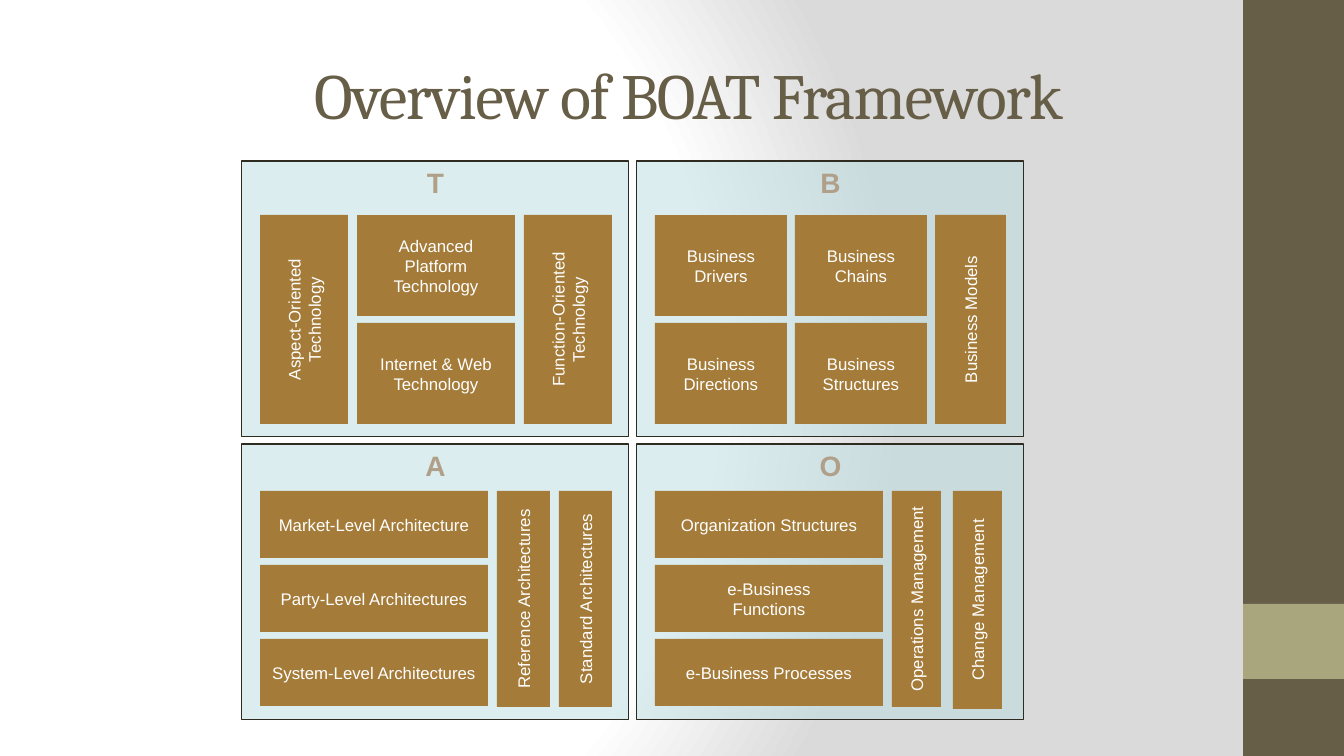
from dataclasses import dataclass

from lxml import etree
from pptx import Presentation
from pptx.dml.color import RGBColor
from pptx.enum.shapes import MSO_SHAPE
from pptx.enum.text import MSO_ANCHOR, MSO_AUTO_SIZE, PP_ALIGN
from pptx.oxml import parse_xml
from pptx.oxml.ns import qn
from pptx.util import Emu, Pt

RECT = MSO_SHAPE.RECTANGLE
CENTER = PP_ALIGN.CENTER
TOP, MIDDLE = MSO_ANCHOR.TOP, MSO_ANCHOR.MIDDLE
NO_AUTOFIT = MSO_AUTO_SIZE.NONE

PX = 914400 / 100.8  # EMU per pixel
SLIDE_W, SLIDE_H = 1344, 756
TITLE_ONLY = 5


@dataclass(frozen=True)
class Theme:
    heading_font: str = "Cambria"
    body_font: str = "Arial"
    olive: str = "675E47"
    sage: str = "A9A57C"
    panel: str = "BADDE1"
    panel_alpha: int = 50
    border: str = "2F2B20"
    letter: str = "B1A089"
    block: str = "A47B38"
    white: str = "FFFFFF"
    grey: str = "DADADA"
    title_size: int = 46
    letter_size: int = 20
    block_size: int = 12


THEME = Theme()

# Panel geometry
PANEL_X, PANEL_Y, PANEL_W, PANEL_H = 242, 161, 387, 276
PITCH_X, PITCH_Y = 395, 283
INSET = 18
GRID_Y, CELL_H, CELL_PITCH = 54, 101, 108      # upper panels
GRID_H = CELL_PITCH + CELL_H
ROWS_Y, ROW_W, ROW_H, ROW_PITCH = 47, 228, 67, 74  # lower panels
ROWS_H = 2 * ROW_PITCH + ROW_H + 1


def px(*values):
    return [Emu(round(v * PX)) for v in values]


def grid(lefts, width, labels):
    """Cells in two rows, filled row by row."""
    n = len(lefts)
    return [(lefts[i % n], GRID_Y + i // n * CELL_PITCH, width, CELL_H, label, False)
            for i, label in enumerate(labels)]


def rows(labels):
    return [(INSET, ROWS_Y + i * ROW_PITCH, ROW_W, ROW_H, label, False)
            for i, label in enumerate(labels)]


# Blocks per panel: left, top, width, height (inside the panel), label, upright
PANELS = [
    ("T", 0, 0, grid([115], 158, ["Advanced Platform Technology",
                                  "Internet & Web Technology"]) + [
        (INSET, GRID_Y, 88, GRID_H, "Aspect-Oriented Technology", True),
        (282, GRID_Y, 88, GRID_H, "Function-Oriented Technology", True)]),
    ("B", 1, 0, grid([INSET, 158], 132, ["Business\nDrivers", "Business\nChains",
                                         "Business\nDirections", "Business\nStructures"]) + [
        (298, GRID_Y, 71, GRID_H, "Business Models", True)]),
    ("A", 0, 1, rows(["Market-Level Architecture", "Party-Level Architectures",
                      "System-Level Architectures"]) + [
        (255, ROWS_Y, 53, ROWS_H, "Reference Architectures", True),
        (317, ROWS_Y, 53, ROWS_H, "Standard Architectures", True)]),
    ("O", 1, 1, rows(["Organization Structures", "e-Business\vFunctions",
                      "e-Business Processes"]) + [
        (255, ROWS_Y, 49, ROWS_H, "Operations Management", True),
        (316, ROWS_Y, 49, ROWS_H + 2, "Change Management", True)]),
]


def write(tf, text, font, size, color, anchor, bold=False):
    tf.text = text
    tf.word_wrap = True
    tf.vertical_anchor = anchor
    for p in tf.paragraphs:
        p.alignment = CENTER
        for r in p.runs:
            r.font.name = font
            r.font.size = Pt(size)
            r.font.bold = bold
            r.font.color.rgb = RGBColor.from_string(color)


def add_rect(shapes, box, color):
    sp = shapes.add_shape(RECT, *px(*box))
    sp.shadow.inherit = False
    sp.fill.solid()
    sp.fill.fore_color.rgb = RGBColor.from_string(color)
    sp.line.fill.background()
    return sp


def add_background(slide):
    """Radial gradient behind the whole slide."""
    stops = "".join(f'<a:gs pos="{pos * 1000}"><a:srgbClr val="{color}"/></a:gs>'
                    for pos, color in [(0, THEME.white), (75, THEME.white), (100, THEME.grey)])
    fill = parse_xml(
        '<a:gradFill xmlns:a="http://schemas.openxmlformats.org/drawingml/2006/main" '
        f'rotWithShape="1"><a:gsLst>{stops}</a:gsLst><a:path path="circle">'
        '<a:fillToRect l="20000" t="50000" r="100000" b="50000"/></a:path></a:gradFill>')
    slide.background.fill.solid()
    solid = slide.element.find(".//" + qn("p:bgPr")).find(qn("a:solidFill"))
    solid.getparent().replace(solid, fill)


def add_sidebar(slide, x, y, w, h):
    add_rect(slide.shapes, (x, y, w, h), THEME.olive)
    add_rect(slide.shapes, (x, y + h * 4 // 5, w, h // 10), THEME.sage)


def add_title(slide, x, y, w, h):
    title = slide.shapes.title
    title.left, title.top, title.width, title.height = px(x, y, w, h)
    tf = title.text_frame
    write(tf, "Overview of BOAT Framework", THEME.heading_font,
          THEME.title_size, THEME.olive, MIDDLE)
    tf.auto_size = NO_AUTOFIT
    tf.paragraphs[0].runs[0].font._element.set("spc", "-100")


def add_panel(slide, x, y, w, h, letter, blocks):
    shapes = slide.shapes.add_group_shape().shapes

    # Translucent frame with its letter
    frame = add_rect(shapes, (x, y, w, h), THEME.panel)
    color = frame.element.spPr.find(qn("a:solidFill"))[0]
    etree.SubElement(color, qn("a:alpha")).set("val", str(THEME.panel_alpha * 1000))
    frame.line.color.rgb = RGBColor.from_string(THEME.border)
    frame.line.width = Pt(0.75)
    write(frame.text_frame, letter, THEME.body_font, THEME.letter_size,
          THEME.letter, TOP, bold=True)

    # Blocks inside the frame
    for left, top, width, height, label, upright in blocks:
        sp = add_rect(shapes, (x + left, y + top, width, height), THEME.block)
        write(sp.text_frame, label, THEME.body_font, THEME.block_size, THEME.white, MIDDLE)
        if upright:
            sp.element.txBody.find(qn("a:bodyPr")).set("vert", "vert270")


def main():
    prs = Presentation()
    prs.slide_width, prs.slide_height = px(SLIDE_W, SLIDE_H)
    slide = prs.slides.add_slide(prs.slide_layouts[TITLE_ONLY])
    add_background(slide)
    add_sidebar(slide, 1243, 0, 101, SLIDE_H)
    add_title(slide, 93, 40, 1191, 108)
    for letter, col, row, blocks in PANELS:
        add_panel(slide, PANEL_X + col * PITCH_X, PANEL_Y + row * PITCH_Y,
                  PANEL_W, PANEL_H, letter, blocks)
    prs.save("out.pptx")


if __name__ == "__main__":
    main()
